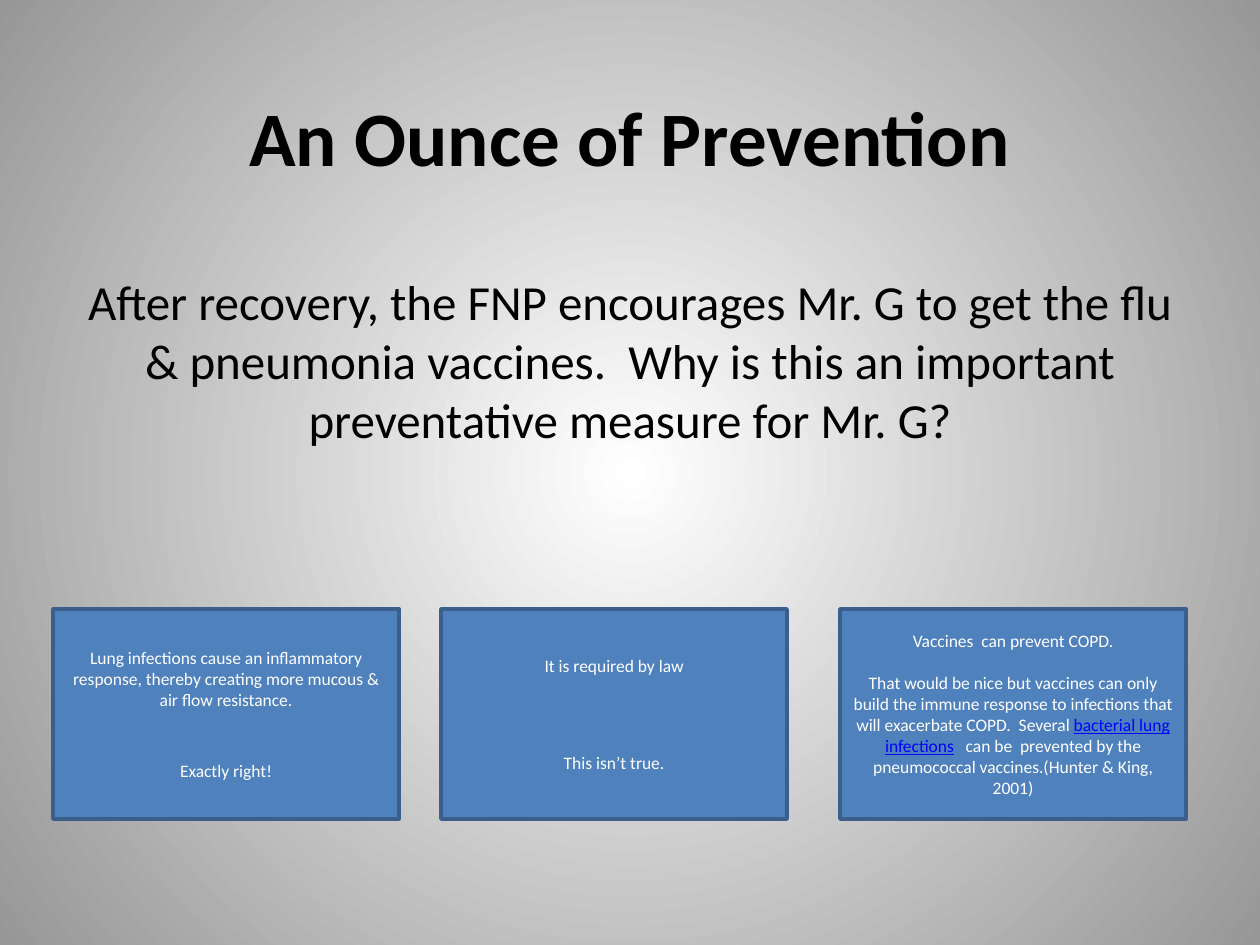
from lxml.etree import SubElement
from pptx import Presentation
from pptx.dml.color import RGBColor
from pptx.enum.shapes import MSO_SHAPE
from pptx.enum.text import MSO_ANCHOR, PP_ALIGN
from pptx.oxml.ns import qn
from pptx.util import Pt

SCALE = 914400 / 126
HUES = {"white": "FFFFFF", "grey": "979797", "black": "000000",
        "blue": "4F81BD", "edge": "3A5F8C", "link": "0000FF"}
TOP, WIDE, HIGH = 609, 346, 210
CARDS = [
    (53, 29, [["Lung infections cause an inflammatory response, thereby "
               "creating more mucous & air flow resistance."],
              ["Exactly right!"]]),
    (441, 43, [["It is required by law"], ["This isn’t true."]]),
    (840, 12, [["Vaccines  can prevent COPD."],
               ["That would be nice but vaccines can only build the immune "
                "response to infections that will exacerbate COPD.  Several ",
                "bacterial lung infections",
                "   can be  prevented by the pneumococcal vaccines."
                "(Hunter & King, 2001)"]]),
]


def px(n):
    return round(n * SCALE)


def hue(name):
    return RGBColor.from_string(HUES[name])


def paint(slide):
    fill = slide.background.fill
    fill.gradient()
    for stop, name in zip(fill.gradient_stops, ("white", "grey")):
        stop.color.rgb = hue(name)
    grad = next(slide.element.iter(qn("a:gradFill")))
    grad.remove(grad.find(qn("a:lin")))
    shade = SubElement(grad, qn("a:path"))
    shade.set("path", "circle")
    focus = SubElement(shade, qn("a:fillToRect"))
    for side in "ltrb":
        focus.set(side, "50000")


def style(para, size, name, bold=False):
    para.alignment = PP_ALIGN.CENTER
    font = para.font
    font.name, font.size, font.bold = "Calibri", Pt(size), bold
    font.color.rgb = hue(name)


def add_head(slide):
    box = slide.shapes.add_textbox(px(63), px(38), px(1134), px(519))
    frame = box.text_frame
    frame.word_wrap = True
    frame.vertical_anchor = MSO_ANCHOR.MIDDLE
    frame.margin_bottom = px(63)
    title = frame.paragraphs[0]
    title.text = "An Ounce of Prevention"
    style(title, 44, "black", True)
    ask = frame.add_paragraph()
    ask.text = ("After recovery, the FNP encourages Mr. G to get the flu "
                "& pneumonia vaccines.  Why is this an important "
                "preventative measure for Mr. G?")
    ask.space_before = Pt(51)
    style(ask, 28, "black")


def add_card(slide, left, gap, parts):
    card = slide.shapes.add_shape(
        MSO_SHAPE.RECTANGLE, px(left), px(TOP), px(WIDE), px(HIGH))
    card.shadow.inherit = False
    card.fill.solid()
    card.fill.fore_color.rgb = hue("blue")
    card.line.color.rgb = hue("edge")
    card.line.width = Pt(2)
    frame = card.text_frame
    frame.word_wrap = True
    frame.vertical_anchor = MSO_ANCHOR.MIDDLE
    for i, texts in enumerate(parts):
        para = frame.add_paragraph() if i else frame.paragraphs[0]
        style(para, 10, "white")
        if i:
            para.space_before = Pt(gap)
        for j, text in enumerate(texts):
            run = para.add_run()
            run.text = text
            if j == 1:
                run.font.underline = True
                run.font.color.rgb = hue("link")


def main():
    """Build the prevention quiz slide."""
    deck = Presentation()
    deck.slide_width, deck.slide_height = px(1260), px(945)
    slide = deck.slides.add_slide(deck.slide_layouts[6])
    paint(slide)
    add_head(slide)
    for card in CARDS:
        add_card(slide, *card)
    deck.save("out.pptx")


if __name__ == "__main__":
    main()
